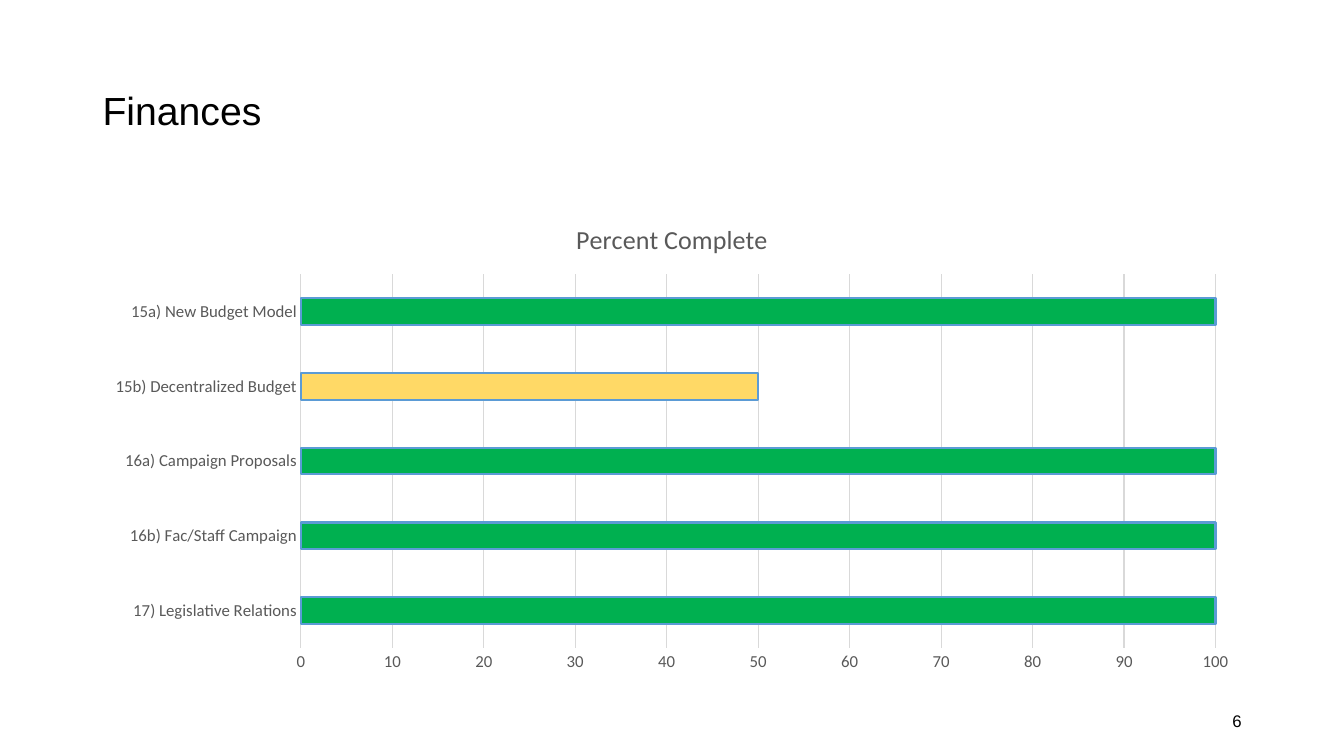
from dataclasses import dataclass

from pptx import Presentation
from pptx.chart.chart import Chart
from pptx.chart.data import CategoryChartData
from pptx.dml.chtfmt import ChartFormat
from pptx.dml.color import RGBColor
from pptx.enum.chart import XL_CHART_TYPE, XL_TICK_MARK
from pptx.enum.text import MSO_ANCHOR, PP_ALIGN
from pptx.slide import Slide
from pptx.text.text import Font
from pptx.util import Cm, Pt


@dataclass(frozen=True)
class Theme:
    text_font: str = "Arial"
    chart_font: str = "Calibri"
    title_size: float = 28
    chart_title_size: float = 18.6
    label_size: float = 12
    black: str = "000000"
    grey: str = "595959"
    grid: str = "D9D9D9"
    done: str = "00B050"
    partial: str = "FFD966"
    outline: str = "5B9BD5"


@dataclass(frozen=True)
class Goal:
    name: str
    percent: int


THEME = Theme()
GOALS = [
    Goal("15a) New Budget Model", 100),
    Goal("15b) Decentralized Budget", 50),
    Goal("16a) Campaign Proposals", 100),
    Goal("16b) Fac/Staff Campaign", 100),
    Goal("17) Legislative Relations", 100),
]
LEFT, WIDTH = Cm(2.33), Cm(29.21)


def set_font(font: Font, name: str, size: float, color: str) -> None:
    font.name, font.size, font.bold = name, Pt(size), False
    font.color.rgb = RGBColor.from_string(color)


def set_line(fmt: ChartFormat, color: str, width: float) -> None:
    fmt.line.color.rgb = RGBColor.from_string(color)
    fmt.line.width = Pt(width)


def set_bar(fmt: ChartFormat, fill: str) -> None:
    fmt.fill.solid()
    fmt.fill.fore_color.rgb = RGBColor.from_string(fill)
    set_line(fmt, THEME.outline, 1.5)


def add_title(s: Slide, text: str) -> None:
    title = s.shapes.title
    title.left, title.top, title.width, title.height = LEFT, Cm(1.01), WIDTH, Cm(3.68)
    tf = title.text_frame
    tf.text = text
    tf.vertical_anchor = MSO_ANCHOR.MIDDLE
    p = tf.paragraphs[0]
    p.alignment, p.line_spacing = PP_ALIGN.LEFT, 0.9
    set_font(p.font, THEME.text_font, THEME.title_size, THEME.black)


def style_axes(chart: Chart) -> None:
    for axis in (chart.category_axis, chart.value_axis):
        axis.major_tick_mark = axis.minor_tick_mark = XL_TICK_MARK.NONE
        set_font(axis.tick_labels.font, THEME.chart_font, THEME.label_size, THEME.grey)
    chart.category_axis.has_major_gridlines = False
    set_line(chart.category_axis.format, THEME.grid, 0.75)
    values = chart.value_axis
    values.minimum_scale, values.maximum_scale, values.major_unit = 0, 100, 10
    values.format.line.fill.background()
    set_line(values.major_gridlines.format, THEME.grid, 0.75)


def add_progress_chart(s: Slide, goals: list[Goal]) -> None:
    """Draw one bar per goal, the first goal on top."""
    rows = goals[::-1]
    data = CategoryChartData()
    data.categories = [goal.name for goal in rows]
    data.add_series("Series 1", [goal.percent for goal in rows])
    chart = s.shapes.add_chart(
        XL_CHART_TYPE.BAR_CLUSTERED, LEFT, Cm(5.08), WIDTH, Cm(12.09), data
    ).chart
    set_font(chart.font, THEME.chart_font, 10, THEME.black)
    chart.has_legend = False
    chart.has_title = True
    p = chart.chart_title.text_frame.paragraphs[0]
    p.text = "Percent Complete"
    set_font(p.font, THEME.chart_font, THEME.chart_title_size, THEME.grey)
    style_axes(chart)

    plot = chart.plots[0]
    plot.gap_width, plot.vary_by_categories = 182, False
    series = plot.series[0]
    set_bar(series.format, THEME.partial)
    for i, goal in enumerate(rows):
        if goal.percent == 100:
            set_bar(series.points[i].format, THEME.done)


def add_page_number(s: Slide, number: int) -> None:
    tf = s.shapes.add_textbox(Cm(23.92), Cm(17.65), Cm(7.62), Cm(1.01)).text_frame
    tf.word_wrap = True
    tf.vertical_anchor = MSO_ANCHOR.MIDDLE
    p = tf.paragraphs[0]
    p.text = str(number)
    p.alignment = PP_ALIGN.RIGHT
    set_font(p.font, THEME.text_font, THEME.label_size, THEME.black)


def main() -> None:
    prs = Presentation()
    prs.slide_width, prs.slide_height = Cm(33.87), Cm(19.05)
    s = prs.slides.add_slide(prs.slide_layouts[5])
    add_title(s, "Finances")
    add_progress_chart(s, GOALS)
    add_page_number(s, 6)
    prs.save("out.pptx")


if __name__ == "__main__":
    main()
